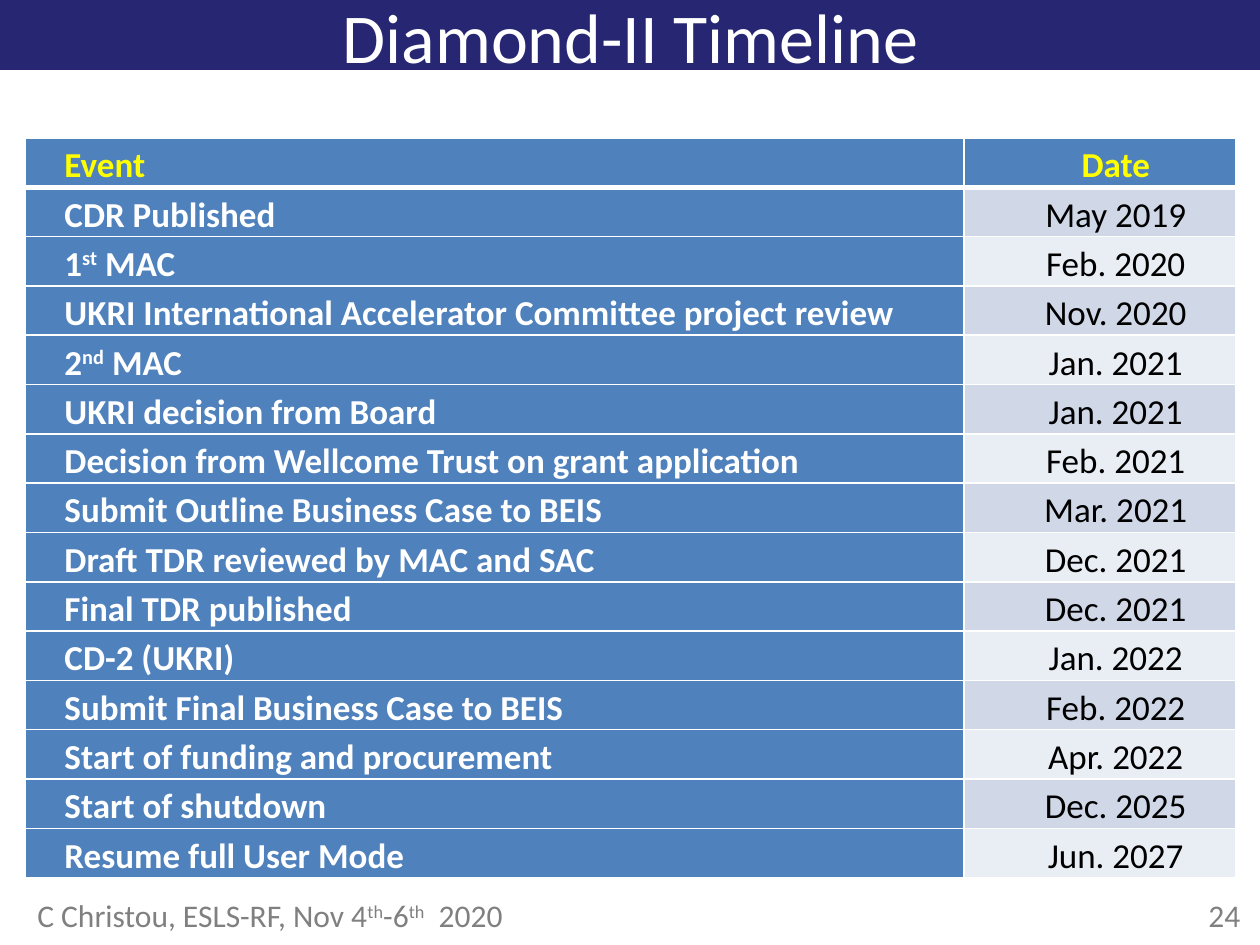
import pptx
import pptx.util
import pptx.dml.color
import pptx.enum.shapes
import pptx.enum.text
import lxml.etree

RGBColor = pptx.dml.color.RGBColor
ALIGN = pptx.enum.text.PP_ALIGN
ANCHOR = pptx.enum.text.MSO_ANCHOR
NAVY = RGBColor(0x26, 0x26, 0x73)
BLUE = RGBColor(0x4F, 0x81, 0xBD)
PALE = RGBColor(0xE9, 0xED, 0xF4)
MIST = RGBColor(0xD0, 0xD8, 0xE8)
YELLOW = RGBColor(0xFF, 0xFF, 0x00)
WHITE = RGBColor(0xFF, 0xFF, 0xFF)
BLACK = RGBColor(0x00, 0x00, 0x00)
GREY = RGBColor(0x80, 0x80, 0x80)
SCALE = 914400 / 126
NS = "http://schemas.openxmlformats.org/drawingml/2006/main"


def px(*sizes):
    return [pptx.util.Emu(round(size * SCALE)) for size in sizes]


def write(para, text, size, color, bold=False):
    for num, part in enumerate(text.split("^")):
        run = para.add_run()
        run.text = part
        form = {"name": "Calibri", "size": pptx.util.Pt(size), "bold": bold}
        for key, value in form.items():
            setattr(run.font, key, value)
        run.font.color.rgb = color
        if num % 2:
            run.font._element.set("baseline", "30000")


rows = [
    ("Event", "Date"),
    ("CDR Published", "May 2019"),
    ("1^st^ MAC", "Feb. 2020"),
    ("UKRI International Accelerator Committee project review", "Nov. 2020"),
    ("2^nd^ MAC", "Jan. 2021"),
    ("UKRI decision from Board", "Jan. 2021"),
    ("Decision from Wellcome Trust on grant application", "Feb. 2021"),
    ("Submit Outline Business Case to BEIS", "Mar. 2021"),
    ("Draft TDR reviewed by MAC and SAC", "Dec. 2021"),
    ("Final TDR published", "Dec. 2021"),
    ("CD-2 (UKRI)", "Jan. 2022"),
    ("Submit Final Business Case to BEIS", "Feb. 2022"),
    ("Start of funding and procurement", "Apr. 2022"),
    ("Start of shutdown", "Dec. 2025"),
    ("Resume full User Mode", "Jun. 2027"),
]

deck = pptx.Presentation()
deck.slide_width, deck.slide_height = px(1260, 945)
slide = deck.slides.add_slide(deck.slide_layouts[5])
shapes = slide.shapes

band = shapes.add_shape(pptx.enum.shapes.MSO_SHAPE.RECTANGLE, *px(0, 0, 1260, 70))
band.shadow.inherit = False
band.fill.solid()
band.fill.fore_color.rgb = NAVY
band.line.fill.background()

title = shapes.title
for key, value in zip(("left", "top", "width", "height"), px(25, -14, 1211, 100)):
    setattr(title, key, value)
title.text_frame.auto_size = pptx.enum.text.MSO_AUTO_SIZE.NONE
title.text_frame.vertical_anchor = ANCHOR.MIDDLE
head = title.text_frame.paragraphs[0]
head.alignment = ALIGN.CENTER
write(head, "Diamond-II Timeline", 40, WHITE)
band._element.addnext(title._element)

frame = shapes.add_table(len(rows), 2, *px(25, 138, 1211, 49 * len(rows)))
table = frame.table
for col, width in zip(table.columns, px(939, 272)):
    col.width = width

for top, row in enumerate(rows):
    table.rows[top].height = px(49)[0]
    for left, text in enumerate(row):
        cell = table.cell(top, left)
        side, none = px(8, 0)
        form = {
            "margin_left": side,
            "margin_right": side,
            "margin_top": none,
            "margin_bottom": none,
            "vertical_anchor": ANCHOR.MIDDLE,
        }
        for key, value in form.items():
            setattr(cell, key, value)

        props = cell._tc.get_or_add_tcPr()
        for edge in "LRTB":
            thick = (top == 0 and edge == "B") or (top == 1 and edge == "T")
            line = lxml.etree.SubElement(props, f"{{{NS}}}ln{edge}")
            line.set("w", str(pptx.util.Pt(3 if thick else 1)))
            fill = lxml.etree.SubElement(line, f"{{{NS}}}solidFill")
            lxml.etree.SubElement(fill, f"{{{NS}}}srgbClr").set("val", str(WHITE))

        label = top == 0 or left == 0
        cell.fill.solid()
        cell.fill.fore_color.rgb = BLUE if label else (PALE, MIST)[top % 2]

        para = cell.text_frame.paragraphs[0]
        para.alignment = ALIGN.CENTER if left else ALIGN.LEFT
        para.line_spacing = 1.15
        if top:
            para.space_after = pptx.util.Pt(1)
        inset = para._p.get_or_add_pPr()
        inset.set("marL", str(pptx.util.Inches(0.5)))
        inset.set("indent", str(pptx.util.Inches(-0.25)))
        color = YELLOW if top == 0 else BLACK if left else WHITE
        write(para, text, 20, color, label)

notes = [
    ("C Christou, ESLS-RF, Nov 4^th^-6^th^  2020", 25, 973),
    ("24", 1196, 59),
]
for text, left, width in notes:
    box = shapes.add_textbox(*px(left, 890, width, 53))
    box.text_frame.word_wrap = True
    write(box.text_frame.paragraphs[0], text, 18, GREY)

deck.save("out.pptx")
